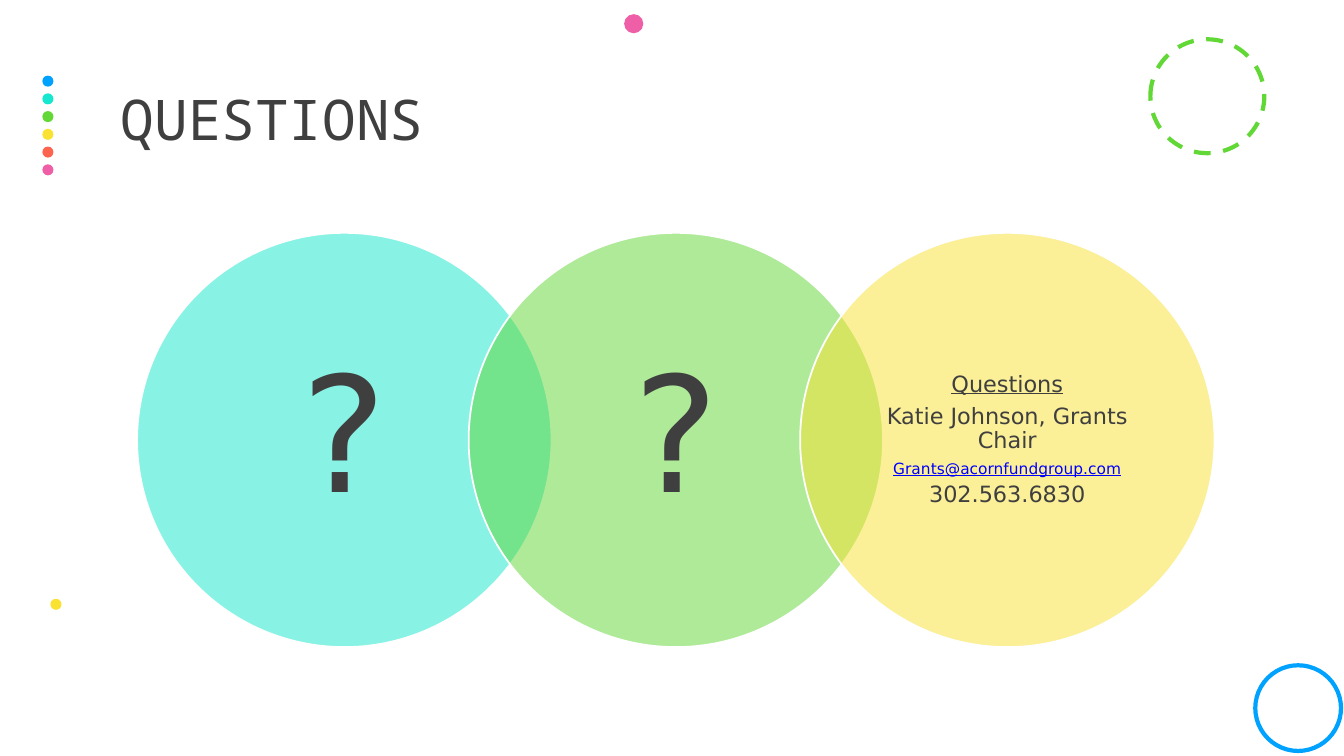
"""Build the closing questions slide with three overlapping circles."""
from dataclasses import dataclass

from lxml import etree
from pptx import Presentation
from pptx.dml.color import RGBColor
from pptx.enum.dml import MSO_LINE
from pptx.enum.shapes import MSO_SHAPE
from pptx.enum.text import MSO_ANCHOR, MSO_AUTO_SIZE, PP_ALIGN
from pptx.oxml.ns import qn
from pptx.util import Inches, Pt

ELLIPSE = MSO_SHAPE.OVAL
MIDDLE = MSO_ANCHOR.MIDDLE
CENTER, LEFT = PP_ALIGN.CENTER, PP_ALIGN.LEFT
DASH = MSO_LINE.DASH
NO_FIT = MSO_AUTO_SIZE.NONE


@dataclass(frozen=True)
class Theme:
    title_font: str = "Noto Sans Mono"
    body_font: str = "DejaVu Sans"
    text: str = "3F3F3F"
    address: str = "0000FF"
    white: str = "FFFFFF"
    blue: str = "00A2FF"
    aqua: str = "16E7CF"
    green: str = "61D836"
    yellow: str = "FAE232"
    coral: str = "FF644E"
    pink: str = "EF5FA7"
    title_size: float = 40
    mark_size: float = 115
    body_size: float = 16
    address_size: float = 11
    line_spacing: float = 0.9
    ring_width: float = 3
    circle_line: float = 1.25
    circle_opacity: int = 50


THEME = Theme()
SLIDE_WIDTH, SLIDE_HEIGHT = 13.33, 7.5

TITLE = "QUESTIONS"
TITLE_BOX = (1.2, 0.46, 11, 1.5)
DOT_COLORS = [THEME.blue, THEME.aqua, THEME.green, THEME.yellow, THEME.coral, THEME.pink]
DOT_LEFT, DOT_TOP, DOT_LAST_TOP, DOT_SIZE = 0.42, 0.75, 1.63, 0.11
LOOSE_DOTS = [(6.19, 0.14, 0.19, THEME.pink), (0.5, 5.94, DOT_SIZE, THEME.yellow)]
RINGS = [(11.41, 0.39, 1.13, THEME.green, DASH), (12.45, 6.6, 0.85, THEME.blue, None)]

QUESTION_MARK = [("?", THEME.mark_size, THEME.text, False, 0)]
CONTACT = [
    ("Questions", THEME.body_size, THEME.text, True, 0),
    ("Katie Johnson, Grants Chair", THEME.body_size, THEME.text, False, 5.6),
    ("Grants@acornfundgroup.com", THEME.address_size, THEME.address, True, 5.6),
    ("302.563.6830", THEME.body_size, THEME.text, False, 3.9),
]
CIRCLES = [
    ("13E7CD", QUESTION_MARK, 0.16),
    ("60D735", QUESTION_MARK, 0.16),
    ("F9E131", CONTACT, 0.02),
]
CIRCLE_LEFT, CIRCLE_TOP, CIRCLE_SIZE = 1.36, 2.31, 4.11
CIRCLE_PITCH = 0.8 * CIRCLE_SIZE
CIRCLE_SIDE_MARGIN = 0.23


def add_circle(slide, left, top, size, fill=None, line=None, width=0):
    shape = slide.shapes.add_shape(ELLIPSE, *map(Inches, (left, top, size, size)))
    shape.shadow.inherit = False
    if fill:
        shape.fill.solid()
        shape.fill.fore_color.rgb = RGBColor.from_string(fill)
    else:
        shape.fill.background()
    if line:
        shape.line.color.rgb = RGBColor.from_string(line)
        shape.line.width = Pt(width)
    else:
        shape.line.fill.background()
    return shape


def set_opacity(shape, percent):
    color = shape.fill._xPr.find(qn("a:solidFill"))[0]
    etree.SubElement(color, qn("a:alpha")).set("val", str(percent * 1000))


def set_frame(frame, side, vertical):
    frame.word_wrap = True
    frame.auto_size = NO_FIT
    frame.vertical_anchor = MIDDLE
    frame.margin_left = frame.margin_right = Inches(side)
    frame.margin_top = frame.margin_bottom = Inches(vertical)


def write_paragraph(paragraph, text, font, size, color, align, underline=False, before=0):
    paragraph.text = text
    paragraph.alignment = align
    paragraph.line_spacing = THEME.line_spacing
    paragraph.space_before = Pt(before)
    paragraph.font.name = font
    paragraph.font.size = Pt(size)
    paragraph.font.underline = underline
    paragraph.font.color.rgb = RGBColor.from_string(color)


def add_title(slide):
    title = slide.shapes.title
    title.left, title.top, title.width, title.height = map(Inches, TITLE_BOX)
    set_frame(title.text_frame, 0, 0.05)
    write_paragraph(title.text_frame.paragraphs[0], TITLE, THEME.title_font,
                    THEME.title_size, THEME.text, LEFT)


def add_decoration(slide):
    step = (DOT_LAST_TOP - DOT_TOP) / (len(DOT_COLORS) - 1)
    for row, color in enumerate(DOT_COLORS):
        add_circle(slide, DOT_LEFT, DOT_TOP + row * step, DOT_SIZE, fill=color)
    for left, top, size, color in LOOSE_DOTS:
        add_circle(slide, left, top, size, fill=color)
    for left, top, size, color, dash in RINGS:
        ring = add_circle(slide, left, top, size, line=color, width=THEME.ring_width)
        ring.line.dash_style = dash


def add_question_circles(slide):
    for column, (color, lines, vertical_margin) in enumerate(CIRCLES):
        circle = add_circle(slide, CIRCLE_LEFT + column * CIRCLE_PITCH, CIRCLE_TOP,
                            CIRCLE_SIZE, color, THEME.white, THEME.circle_line)
        set_opacity(circle, THEME.circle_opacity)
        frame = circle.text_frame
        set_frame(frame, CIRCLE_SIDE_MARGIN, vertical_margin)
        for index, (text, size, text_color, underline, before) in enumerate(lines):
            paragraph = frame.add_paragraph() if index else frame.paragraphs[0]
            write_paragraph(paragraph, text, THEME.body_font, size, text_color,
                            CENTER, underline, before)


def main():
    presentation = Presentation()
    presentation.slide_width = Inches(SLIDE_WIDTH)
    presentation.slide_height = Inches(SLIDE_HEIGHT)
    title_only = presentation.slide_layouts.get_by_name("Title Only")
    slide = presentation.slides.add_slide(title_only)
    add_title(slide)
    add_decoration(slide)
    add_question_circles(slide)
    presentation.save("out.pptx")


if __name__ == "__main__":
    main()
